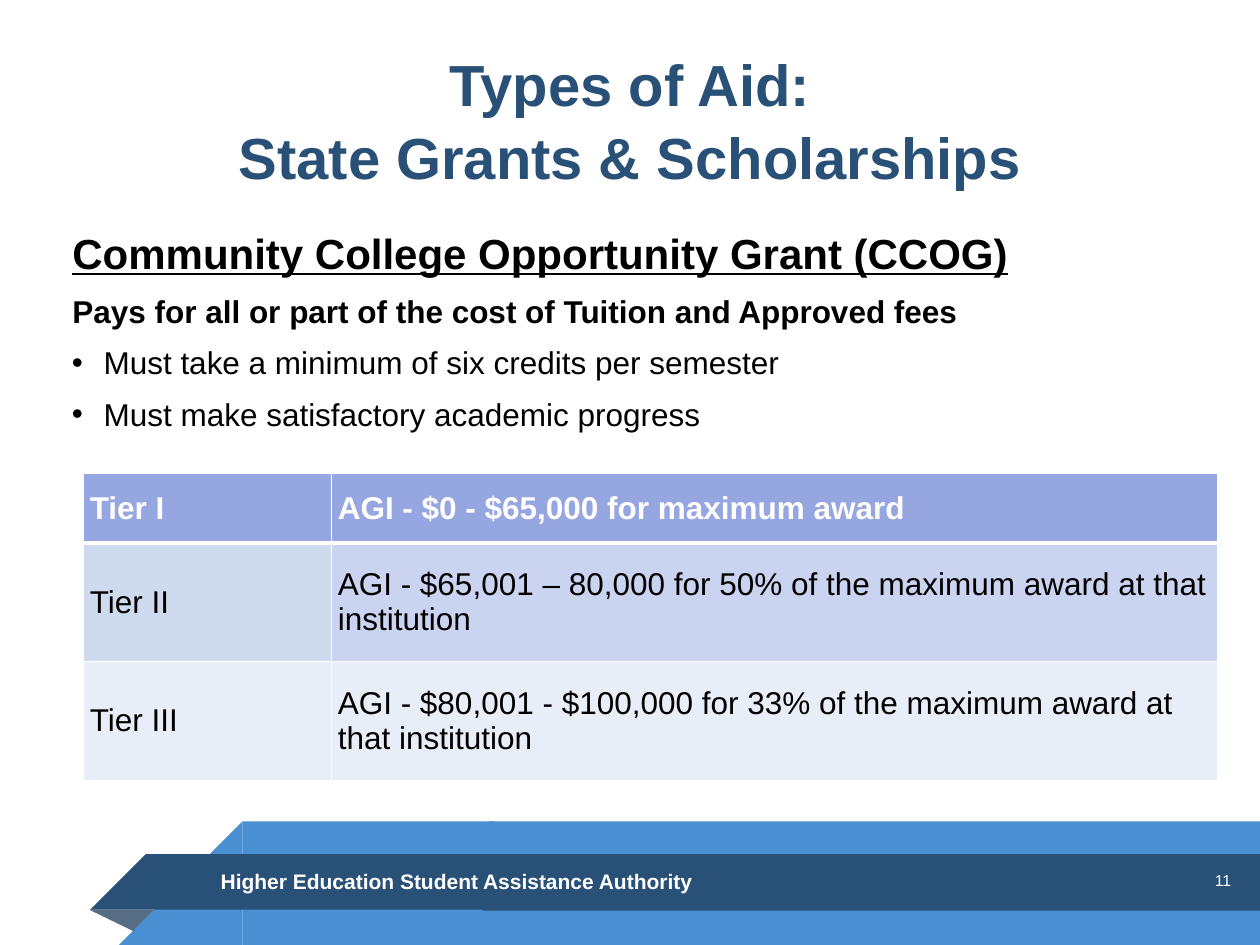
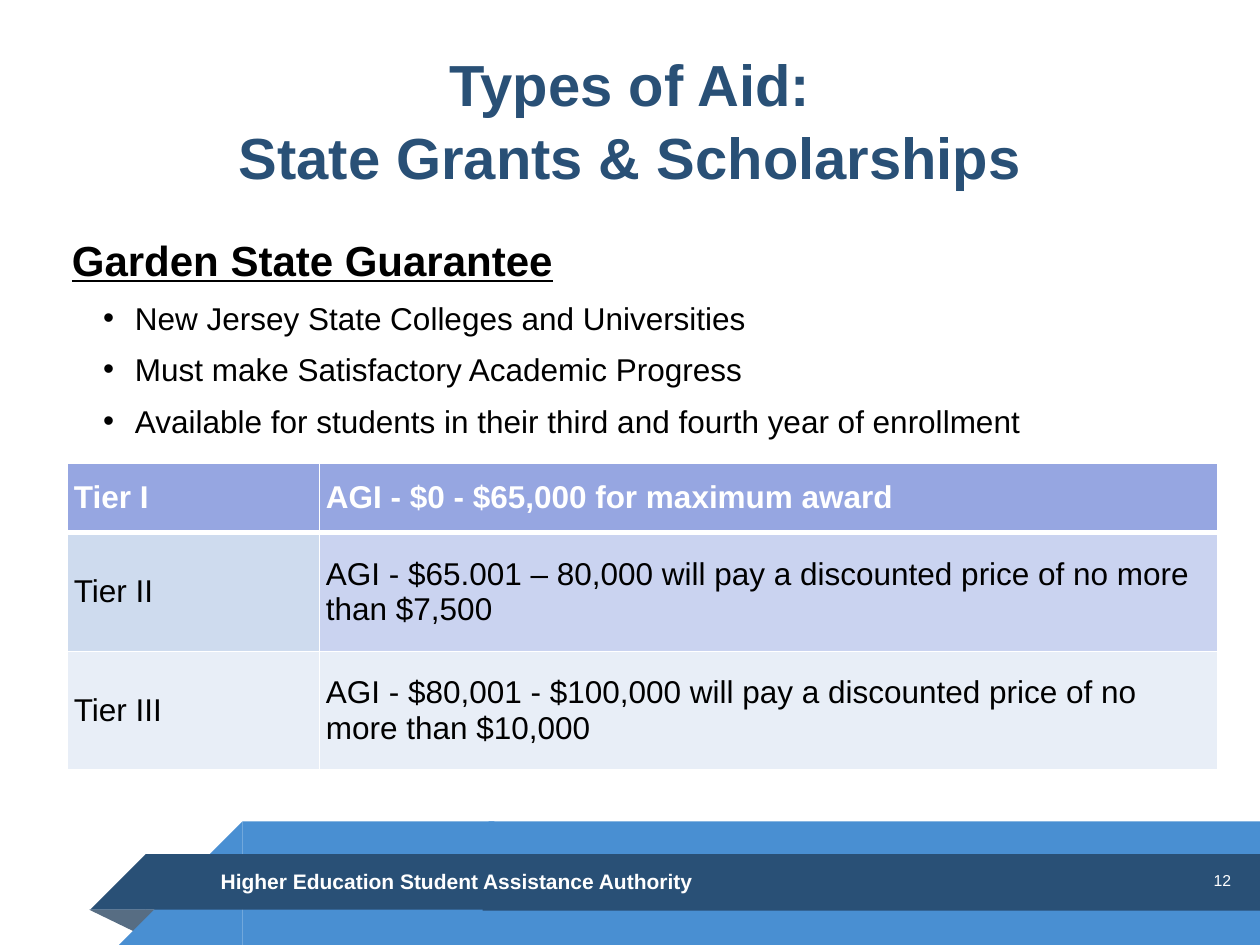
from lxml import etree
from pptx import Presentation
from pptx import util as u
from pptx.dml.color import RGBColor
from pptx.enum import shapes, text
from pptx.oxml import ns

FONT = "Arial"
WHITE, BLACK = "FFFFFF", "000000"
NAVY, BLUE, FOLD = "295076", "498FD2", "576D83"
HEADER_FILL = "96A6E1"
BODY_FILLS = [("CEDBEE", "CAD3F0"), ("E8EEF7", "E8EEF7")]
INSET = u.Cm(0.13)
FOOTER_BOX = (1.8, 16.56, 23.6, 2.49)
TITLE_BOX = (1.27, 0.79, 22.86, 3.18)
TITLE_LINES = ("Types of Aid:", "State Grants & Scholarships")
ROW_HEIGHTS = (1.4, 2.39, 2.39)


def colour(value):
    return RGBColor.from_string(value)


def lengths(box):
    return [u.Cm(value) for value in box]


def paint(shape, fill):
    shape.shadow.inherit = False
    shape.fill.solid()
    shape.fill.fore_color.rgb = colour(fill)
    shape.line.fill.background()


def add_run(paragraph, words, size, fill=BLACK, bold=False, underline=False):
    run = paragraph.add_run()
    run.text = words
    font = run.font
    font.name, font.size = FONT, u.Pt(size)
    font.bold, font.underline = bold, underline
    font.color.rgb = colour(fill)


def set_frame(frame, anchor=text.MSO_ANCHOR.MIDDLE, wrap=True):
    frame.margin_left = frame.margin_right = INSET
    frame.margin_top = frame.margin_bottom = INSET
    frame.vertical_anchor = anchor
    frame.auto_size = text.MSO_AUTO_SIZE.NONE
    frame.word_wrap = wrap


def add_text_box(slide, box, **options):
    frame = slide.shapes.add_textbox(*lengths(box)).text_frame
    set_frame(frame, **options)
    return frame


def add_band(slide, box, fill):
    shape = slide.shapes.add_shape(shapes.MSO_SHAPE.RECTANGLE, *lengths(box))
    paint(shape, fill)


def add_triangle(slide, corners, fill):
    points = [(u.Cm(x), u.Cm(y)) for x, y in corners]
    builder = slide.shapes.build_freeform(*points[0])
    builder.add_line_segments(points[1:], close=True)
    paint(builder.convert_to_shape(), fill)


def add_ribbon_end(slide, left, top, size, overlap, fill):
    """Slanted left end of a band, followed by its straight part."""
    add_band(slide, (left + size, top, overlap, size), fill)
    bottom, right = top + size, left + size
    add_triangle(slide, [(right, bottom), (left, bottom), (right, top)], fill)


def add_footer(slide, box, number):
    left, top, width, height = box
    right, ribbon_top, ribbon_height = left + width, top + 0.66, 1.12
    fold_top = ribbon_top + ribbon_height
    add_band(slide, (left + 8.05, top, width - 8.05, height), BLUE)
    add_triangle(slide, [(left + 1.47, fold_top), (left + 0.99, fold_top + 0.48),
                         (left, fold_top)], FOLD)
    add_ribbon_end(slide, left + 0.6, top, height, 5.08, BLUE)
    add_ribbon_end(slide, left + 0.02, ribbon_top, ribbon_height, 7.04, NAVY)
    add_band(slide, (left + 7.93, ribbon_top, width - 7.93, 1.14), NAVY)

    frame = add_text_box(slide, (left + 2.52, top + 0.84, 10.72, 0.74))
    add_run(frame.paragraphs[0], "Higher Education Student Assistance Authority",
            12, WHITE, bold=True)
    frame = add_text_box(slide, (right - 1.09, top + 0.87, 0.64, 0.64), wrap=False)
    frame.paragraphs[0].alignment = text.PP_ALIGN.RIGHT
    add_run(frame.paragraphs[0], str(number), 9, WHITE)


def format_title(slide, box):
    title = slide.shapes.title
    title.left, title.top, title.width, title.height = lengths(box)
    set_frame(title.text_frame)
    paragraph = title.text_frame.paragraphs[0]
    paragraph.alignment = text.PP_ALIGN.CENTER
    paragraph.line_spacing = 1.05
    for index, line in enumerate(TITLE_LINES):
        if index:
            paragraph.add_line_break()
        add_run(paragraph, line, 33.1, NAVY, bold=True)


def set_indent(paragraph, margin, first, bullet=False):
    properties = paragraph._p.get_or_add_pPr()
    properties.set("marL", str(u.Cm(margin)))
    properties.set("indent", str(u.Cm(first)))
    if bullet:
        font = etree.SubElement(properties, ns.qn("a:buFont"))
        font.set("typeface", FONT)
        etree.SubElement(properties, ns.qn("a:buChar")).set("char", "•")


def add_grant_text(slide, box, heading, lead, bullets, start, gap, spacing):
    """Underlined heading, optional bold lead and bullets; start is the heading's indent."""
    frame = add_text_box(slide, box, anchor=text.MSO_ANCHOR.TOP)
    paragraph = frame.paragraphs[0]
    set_indent(paragraph, 0, start)
    add_run(paragraph, heading, 24, bold=True, underline=True)
    lines = [(lead, False)] if lead else []
    lines += [(bullet, True) for bullet in bullets]
    for words, is_bullet in lines:
        paragraph = frame.add_paragraph()
        if is_bullet:
            set_indent(paragraph, 1.27, -0.64, bullet=True)
        else:
            set_indent(paragraph, 0, start)
        paragraph.space_before = u.Pt(gap)
        paragraph.line_spacing = spacing
        add_run(paragraph, words, 18, bold=not is_bullet)


def set_borders(cell, top, bottom):
    properties = cell._tc.get_or_add_tcPr()
    for side, points in (("L", 1), ("R", 1), ("T", top), ("B", bottom)):
        line = etree.SubElement(properties, ns.qn("a:ln" + side))
        line.set("w", str(u.Pt(points)))
        fill = etree.SubElement(line, ns.qn("a:solidFill"))
        etree.SubElement(fill, ns.qn("a:srgbClr")).set("val", WHITE)


def add_tier_table(slide, box, first_width, awards):
    shape = slide.shapes.add_table(len(awards), 2, *lengths(box))
    table = shape.table
    table.columns[0].width = u.Cm(first_width)
    table.columns[1].width = u.Cm(box[2] - first_width)
    tiers = ("Tier I", "Tier II", "Tier III")
    fills = [(HEADER_FILL, HEADER_FILL)] + BODY_FILLS
    for row, cells in enumerate(zip(tiers, awards)):
        table.rows[row].height = u.Cm(ROW_HEIGHTS[row])
        is_header = row == 0
        for column, words in enumerate(cells):
            cell = table.cell(row, column)
            set_borders(cell, top=3 if row == 1 else 1, bottom=3 if is_header else 1)
            cell.fill.solid()
            cell.fill.fore_color.rgb = colour(fills[row][column])
            cell.margin_left = cell.margin_right = INSET
            cell.margin_top = cell.margin_bottom = INSET
            cell.vertical_anchor = text.MSO_ANCHOR.MIDDLE
            add_run(cell.text_frame.paragraphs[0], words, 18,
                    WHITE if is_header else BLACK, bold=is_header)


def add_grant_slide(presentation, number, grant, tiers):
    slide = presentation.slides.add_slide(presentation.slide_layouts[5])
    add_footer(slide, FOOTER_BOX, number)
    format_title(slide, TITLE_BOX)
    add_grant_text(slide, **grant)
    add_tier_table(slide, **tiers)


def main():
    presentation = Presentation()
    presentation.slide_width, presentation.slide_height = u.Cm(25.4), u.Cm(19.05)
    add_grant_slide(
        presentation, 11,
        grant=dict(
            box=(0.69, 4.45, 24.7, 4.7),
            heading="Community College Opportunity Grant (CCOG)",
            lead="Pays for all or part of the cost of Tuition and Approved fees",
            bullets=["Must take a minimum of six credits per semester",
                     "Must make satisfactory academic progress"],
            start=0.64, gap=8, spacing=1.0),
        tiers=dict(
            box=(1.68, 9.55, 22.86, sum(ROW_HEIGHTS)), first_width=5,
            awards=["AGI - $0 - $65,000 for maximum award",
                    "AGI - $65,001 – 80,000 for 50% of the maximum award at that institution",
                    "AGI - $80,001 - $100,000 for 33% of the maximum award at that institution"]))
    add_grant_slide(
        presentation, 12,
        grant=dict(
            box=(1.32, 4.6, 23.98, 4.09),
            heading="Garden State Guarantee",
            lead=None,
            bullets=["New Jersey State Colleges and Universities",
                     "Must make Satisfactory Academic Progress",
                     "Available for students in their third and fourth year of enrollment"],
            start=0, gap=3.5, spacing=1.2),
        tiers=dict(
            box=(1.36, 9.34, 23.19, sum(ROW_HEIGHTS)), first_width=5.08,
            awards=["AGI - $0 - $65,000 for maximum award",
                    "AGI - $65.001 – 80,000 will pay a discounted price of no more than $7,500",
                    "AGI - $80,001 - $100,000 will pay a discounted price of no more than $10,000"]))
    presentation.save("out.pptx")


if __name__ == "__main__":
    main()
